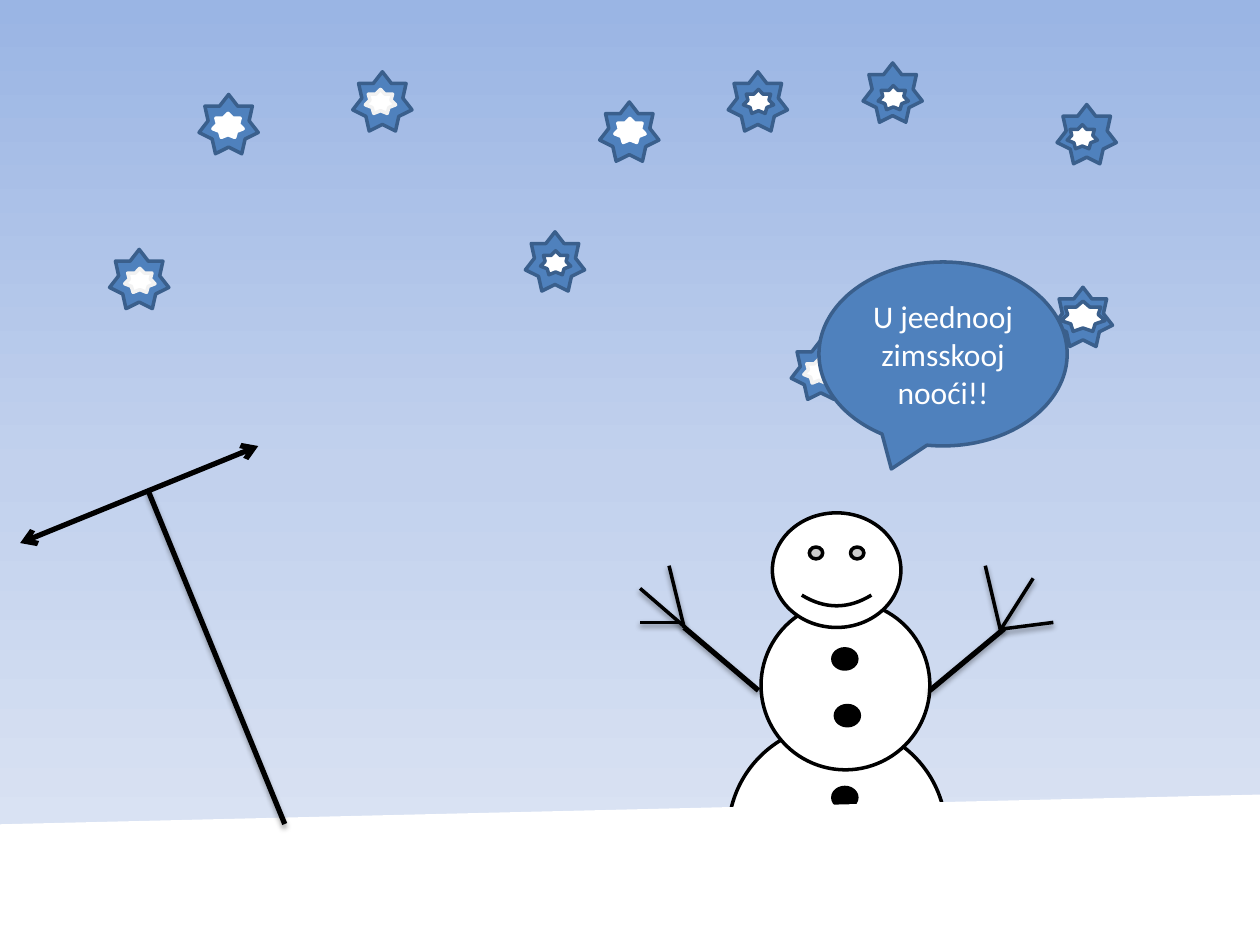
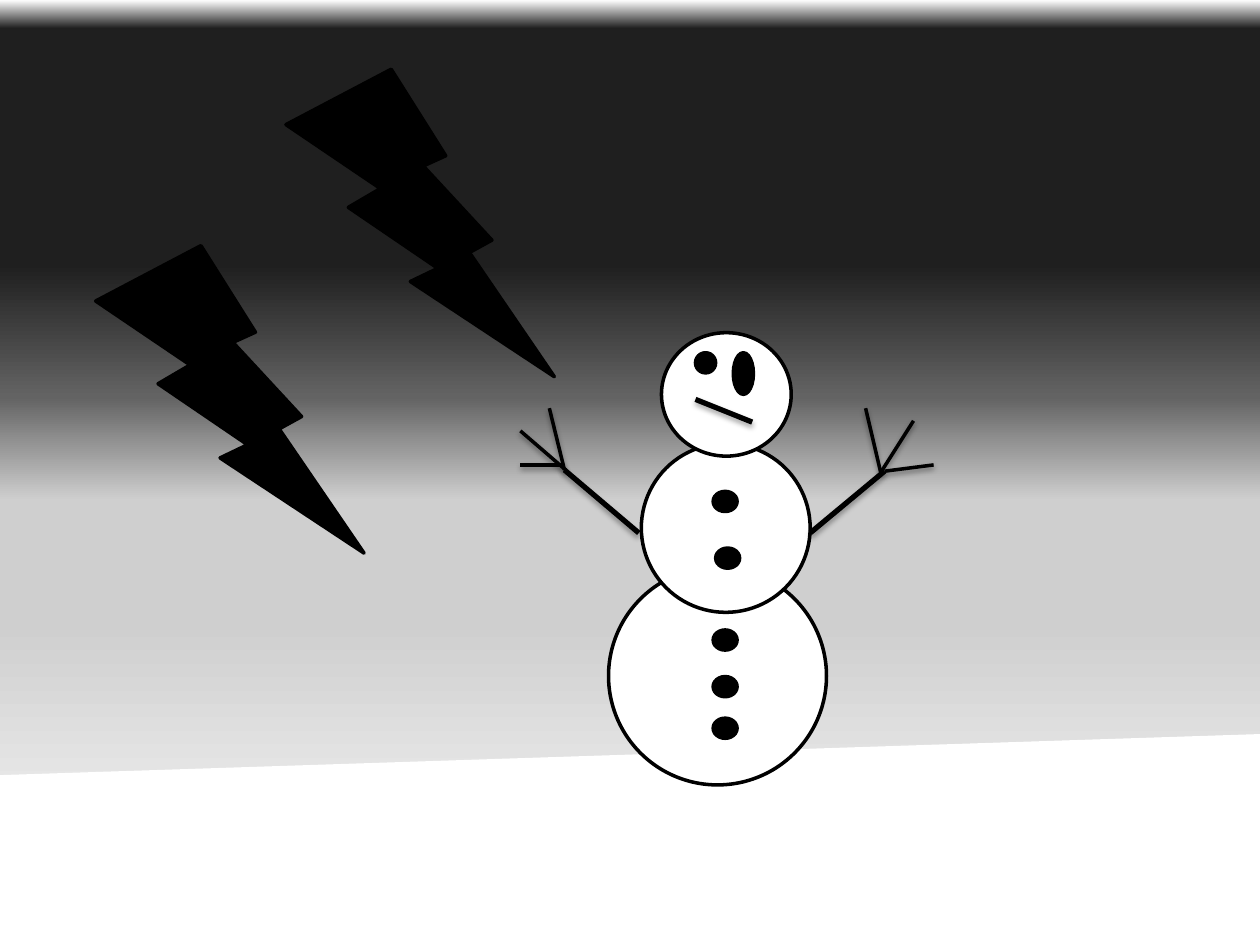
import pptx
import pptx.util
import pptx.dml.color
import pptx.enum.shapes
import pptx.enum.text
import pptx.oxml.ns
import lxml.etree

Inches = pptx.util.Inches
Pt = pptx.util.Pt
qn = pptx.oxml.ns.qn
KIND = pptx.enum.shapes.MSO_SHAPE

BLACK, WHITE, PALE = "000000", "FFFFFF", "F2F2F2"
BLUE, NAVY = "4F81BD", "3A5F8C"
DAY = [(0, "9AB5E4"), (50, "C2D1ED"), (100, "E1E8F5")]
STORM = [(0, WHITE), (3, "1F1F1F"), (28, "1F1F1F"), (42, "636363"),
         (53, "CFCFCF"), (66, "CFCFCF"), (100, WHITE)]

BUTTONS = [(0.57, 0.38), (0.59, 0.83), (0.57, 1.48), (0.57, 1.85), (0.57, 2.18)]
ARMS = [(-0.02, 0.71, -0.61, 0.21), (1.34, 0.71, 1.93, 0.22)]
TWIGS = [(2.16, -0.18, 1.9, 0.23), (1.93, 0.22, 2.32, 0.17),
         (1.78, -0.28, 1.9, 0.23), (-0.73, -0.28, -0.61, 0.21),
         (-0.96, -0.1, -0.6, 0.21), (-0.96, 0.17, -0.61, 0.17)]
SMALL, LARGE = (0.24, 0.19), (0.35, 0.24)
FLAKES = [
    (5.78, 0.57, 0.12, 0.14, SMALL, NAVY),
    (6.28, 2.7, 0.1, 0.15, SMALL, PALE),
    (0.87, 1.98, 0.12, 0.15, SMALL, PALE),
    (7.32, 2.39, 0.12, 0.17, SMALL, WHITE),
    (8.39, 0.83, 0.08, 0.16, SMALL, NAVY),
    (6.85, 0.5, 0.12, 0.18, SMALL, NAVY),
    (8.36, 2.28, 0.06, 0.11, LARGE, NAVY),
    (1.58, 0.75, 0.11, 0.15, SMALL, WHITE),
    (2.8, 0.57, 0.1, 0.14, SMALL, PALE),
    (4.76, 0.81, 0.12, 0.13, SMALL, WHITE),
    (4.17, 1.84, 0.12, 0.15, SMALL, NAVY),
]


def paint(fill, tone):
    fill.solid()
    fill.fore_color.rgb = pptx.dml.color.RGBColor.from_string(tone)


def style(part, form):
    for name, value in form.items():
        setattr(part, name, value)


def node(root, tag, **attrs):
    return lxml.etree.SubElement(root, qn(tag), attrs)


def tint(root, tone):
    return node(root, "a:srgbClr", val=tone)


def sky(slide, stops):
    fill = slide.background.fill
    fill.gradient()
    fill.gradient_angle = 270
    ramp = next(slide.element.iter(qn("a:gsLst")))
    for stop in list(ramp):
        ramp.remove(stop)
    for place, tone in stops:
        tint(node(ramp, "a:gs", pos=str(place * 1000)), tone)


def solid(shapes, kind, x, y, w, h, tone=WHITE, edge=BLACK):
    shape = shapes.add_shape(kind, Inches(x), Inches(y), Inches(w), Inches(h))
    shape.shadow.inherit = False
    paint(shape.fill, tone)
    paint(shape.line.fill, edge)
    shape.line.width = Pt(2)
    return shape


def stroke(shapes, ends, width, alpha=0, heads=False):
    line = shapes.add_connector(pptx.enum.shapes.MSO_CONNECTOR.STRAIGHT,
                                *map(Inches, ends))
    paint(line.line.fill, BLACK)
    line.line.width = Pt(width)
    if heads:
        pen = next(line.element.iter(qn("a:ln")))
        for tag in ("a:headEnd", "a:tailEnd"):
            node(pen, tag, type="arrow")
    glow = node(next(line.element.iter(qn("p:spPr"))), "a:effectLst")
    if alpha:
        cast = node(glow, "a:outerShdw", blurRad=str(Pt(3.1)),
                    dist=str(Pt(1.8)), dir="5400000", rotWithShape="0")
        node(tint(cast, BLACK), "a:alpha", val=str(alpha * 1000))
    return line


def snowman(slide, x, y):
    shapes = slide.shapes.add_group_shape().shapes
    solid(shapes, KIND.OVAL, x - 0.26, y + 0.98, 1.73, 1.73)
    solid(shapes, KIND.OVAL, x, y, 1.34, 1.34)
    for dx, dy in BUTTONS:
        solid(shapes, KIND.OVAL, x + dx, y + dy, 0.19, 0.16, BLACK)
    for limbs, width, alpha in ((ARMS, 3, 35), (TWIGS, 2, 38)):
        for ax, ay, bx, by in limbs:
            stroke(shapes, (x + ax, y + ay, x + bx, y + by), width, alpha)
    return shapes


def snow(slide, y, h):
    solid(slide.shapes, KIND.FLOWCHART_MANUAL_INPUT, 0, y, 10, h, WHITE, WHITE)


def flake(slide, x, y, dx, dy, size, edge):
    shapes = slide.shapes.add_group_shape().shapes
    solid(shapes, KIND.STAR_7_POINT, x, y, 0.47, 0.47, BLUE, NAVY)
    solid(shapes, KIND.STAR_7_POINT, x + dx, y + dy, *size, WHITE, edge)


def bubble(slide, text):
    shape = solid(slide.shapes, KIND.OVAL_CALLOUT, 6.5, 2.08, 1.97, 1.46, BLUE, NAVY)
    frame = shape.text_frame
    style(frame, {"word_wrap": True,
                  "vertical_anchor": pptx.enum.text.MSO_ANCHOR.MIDDLE})
    para = frame.paragraphs[0]
    para.alignment = pptx.enum.text.PP_ALIGN.CENTER
    run = para.add_run()
    run.text = text
    style(run.font, {"name": "Calibri", "size": Pt(18)})
    paint(run.font.fill, WHITE)


def pickaxe(slide):
    shapes = slide.shapes.add_group_shape().shapes
    stroke(shapes, (2.26, 6.54, 1.17, 3.88), 3, 35)
    stroke(shapes, (0.16, 4.31, 2.05, 3.54), 3, heads=True)


def night(slide):
    sky(slide, DAY)
    man = snowman(slide, 6.04, 4.77)
    solid(man, KIND.SMILEY_FACE, 6.13, 4.07, 1.02, 0.91)
    snow(slide, 6.32, 1.18)
    pickaxe(slide)
    for item in FLAKES:
        flake(slide, *item)
    bubble(slide, "U jeednooj zimsskooj nooći!!")


def thunder(slide):
    sky(slide, STORM)
    snow(slide, 5.84, 1.63)
    man = snowman(slide, 5.09, 3.52)
    solid(man, KIND.OVAL, 5.25, 2.64, 1.03, 0.98)
    for x, h in ((5.52, 0.16), (5.82, 0.33)):
        solid(man, KIND.FLOWCHART_CONNECTOR, x, 2.8, 0.16, h, BLACK)
    stroke(man, (5.52, 3.17, 5.97, 3.35), 3, 35)
    for x, y in ((0.76, 1.95), (2.27, 0.55)):
        solid(slide.shapes, KIND.LIGHTNING_BOLT, x, y, 2.13, 2.44, BLACK)


def main():
    deck = pptx.Presentation()
    style(deck, {"slide_width": Inches(10), "slide_height": Inches(7.5)})
    for scene in (night, thunder):
        scene(deck.slides.add_slide(deck.slide_layouts[6]))
    deck.save("out.pptx")


if __name__ == "__main__":
    main()
